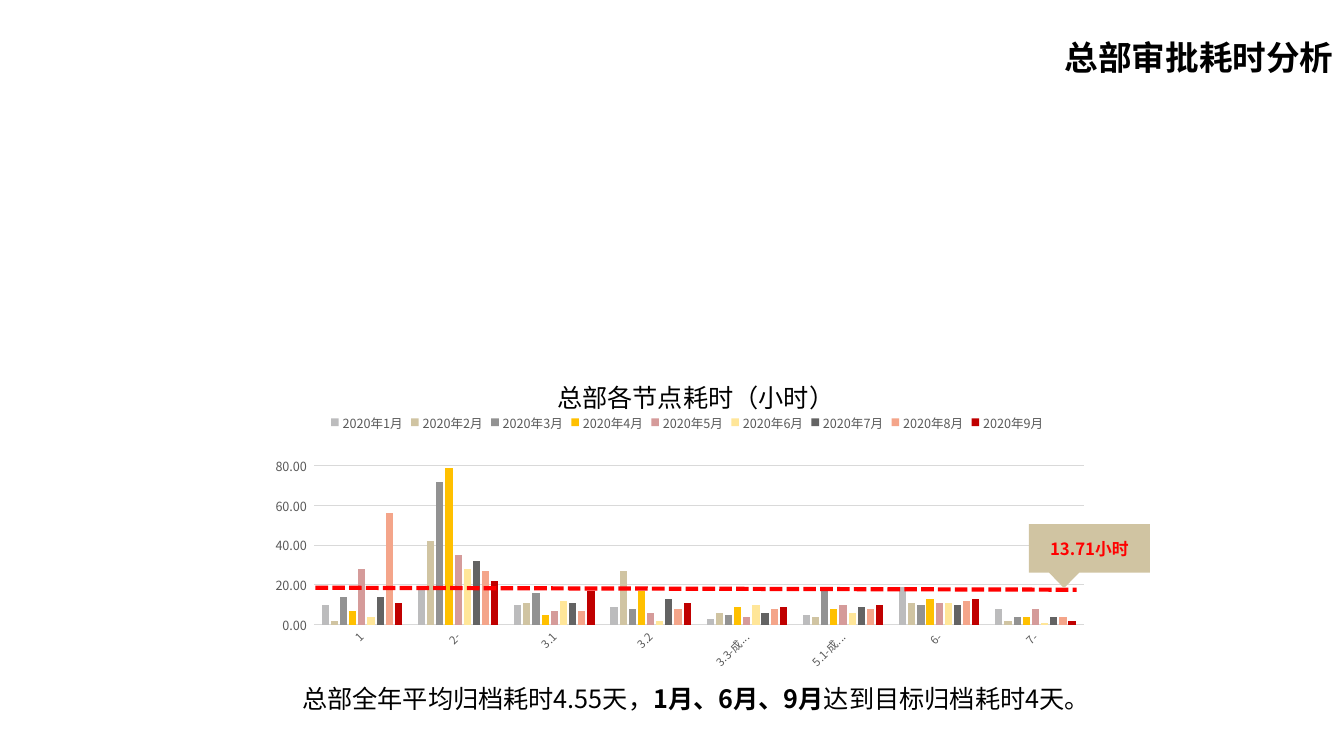
from lxml import etree
from pptx import Presentation
from pptx.chart.data import CategoryChartData
from pptx.dml.color import RGBColor
from pptx.enum.chart import XL_CHART_TYPE, XL_LEGEND_POSITION, XL_TICK_MARK
from pptx.enum.dml import MSO_LINE
from pptx.enum.shapes import MSO_CONNECTOR, MSO_SHAPE
from pptx.enum.text import MSO_ANCHOR, PP_ALIGN
from pptx.oxml import parse_xml
from pptx.oxml.ns import nsdecls, qn
from pptx.util import Cm, Pt

CLUSTERED = XL_CHART_TYPE.COLUMN_CLUSTERED
LEGEND_TOP = XL_LEGEND_POSITION.TOP
NO_TICK = XL_TICK_MARK.NONE
DASH = MSO_LINE.SQUARE_DOT
STRAIGHT = MSO_CONNECTOR.STRAIGHT
CALLOUT = MSO_SHAPE.RECTANGULAR_CALLOUT
MIDDLE = MSO_ANCHOR.MIDDLE
CENTER, RIGHT = PP_ALIGN.CENTER, PP_ALIGN.RIGHT

FONT = "Noto Sans CJK SC"
COLORS = {"text": "000000", "axis": "595959", "grid": "D9D9D9",
          "target": "FF0000", "callout": "D0C4A2", "paper": "FFFFFF"}
NODES = ["1-申请人", "2-本地财务", "3.1-项目负责人", "3.2-项目管理专员",
         "3.3-成本中心负责人/部门经理审批", "5.1-成本中心分管/主管高管审批",
         "6-报销中心稽核", "7-报销中心付款"]
MONTHS = [
    ("BCBCBD", [10, 18, 10, 9, 3, 5, 19, 8]),
    ("D0C4A2", [2, 42, 11, 27, 6, 4, 11, 2]),
    ("929292", [14, 72, 16, 8, 5, 17, 10, 4]),
    ("FFC000", [7, 79, 5, 17, 9, 8, 13, 4]),
    ("D59B9A", [28, 35, 7, 6, 4, 10, 11, 8]),
    ("FFE699", [4, 28, 12, 2, 10, 6, 11, 1]),
    ("636363", [14, 32, 11, 13, 6, 9, 10, 4]),
    ("F4A58A", [56, 27, 7, 8, 8, 8, 12, 4]),
    ("C00000", [11, 22, 17, 11, 9, 10, 13, 2]),
]


def color(name):
    return RGBColor.from_string(COLORS[name])


def set_font(font, size, name="text", bold=None):
    font.name = FONT
    font.size = Pt(size)
    font.color.rgb = color(name)
    font.bold = bold


def write(frame, parts, size, align=CENTER, name="text", bold=None):
    frame.word_wrap = True
    paragraph = frame.paragraphs[0]
    paragraph.alignment = align
    for text, strong in parts:
        run = paragraph.add_run()
        run.text = text
        if strong:
            run.font.bold = True
    set_font(paragraph.font, size, name, bold)
    defaults = paragraph._p.pPr.find(qn("a:defRPr"))
    etree.SubElement(defaults, qn("a:ea")).set("typeface", FONT)
    return paragraph


def add_title(slide, text):
    title = slide.shapes.title
    title.left, title.top, title.width, title.height = Cm(21.95), Cm(0.91), Cm(11.91), Cm(1.19)
    title.text_frame.vertical_anchor = MIDDLE
    write(title.text_frame, [(text, False)], 24, RIGHT, bold=True).line_spacing = 0.9


def add_text(slide, left, top, width, parts):
    box = slide.shapes.add_textbox(Cm(left), Cm(top), Cm(width), Cm(1.02))
    write(box.text_frame, parts, 18)


def style_axes(chart):
    nodes, hours = chart.category_axis, chart.value_axis
    for axis, size in ((nodes, 8), (hours, 9)):
        axis.major_tick_mark = axis.minor_tick_mark = NO_TICK
        set_font(axis.tick_labels.font, size, "axis")
    nodes.tick_labels.font._element.getparent().getparent().getparent().find(
        qn("a:bodyPr")).set("rot", "-2700000")
    hours.minimum_scale, hours.maximum_scale, hours.major_unit = 0, 80, 20
    hours.tick_labels.number_format = "0.00_ "
    hours.tick_labels.number_format_is_linked = False
    hours.format.line.fill.background()
    for line in (nodes.format.line, hours.major_gridlines.format.line):
        line.color.rgb = color("grid")
        line.width = Pt(0.75)


def set_plot_area(chart, x, y, w, h):
    area = chart._chartSpace.chart.plotArea
    for layout in area.findall(qn("c:layout")):
        area.remove(layout)
    sizes = "".join(f'<c:{tag} val="{value}"/>'
                    for tag, value in zip("xywh", (x, y, w, h)))
    area.insert(0, parse_xml(
        f'<c:layout {nsdecls("c")}><c:manualLayout><c:layoutTarget val="inner"/>'
        f'<c:xMode val="edge"/><c:yMode val="edge"/>{sizes}'
        '</c:manualLayout></c:layout>'))


def fill_chart(chart):
    chart._chartSpace.chart.addnext(parse_xml(
        f'<c:spPr {nsdecls("c", "a")}><a:solidFill><a:srgbClr val="{COLORS["paper"]}"/>'
        '</a:solidFill><a:ln><a:noFill/></a:ln></c:spPr>'))


def add_node_chart(slide):
    data = CategoryChartData(number_format="0.00")
    data.categories = NODES
    for month, (_, hours) in enumerate(MONTHS, 1):
        data.add_series(f"2020年{month}月", hours)
    chart = slide.shapes.add_chart(CLUSTERED, Cm(6.22), Cm(10.13),
                                   Cm(22.2), Cm(6.76), data).chart
    set_font(chart.font, 10)
    chart.has_title = False
    chart.has_legend = True
    chart.legend.position = LEGEND_TOP
    chart.legend.include_in_layout = False
    set_font(chart.legend.font, 9, "axis")
    plot = chart.plots[0]
    plot.gap_width, plot.overlap = 219, -27
    plot.vary_by_categories = False
    for series, (shade, _) in zip(plot.series, MONTHS):
        series.format.fill.solid()
        series.format.fill.fore_color.rgb = RGBColor.from_string(shade)
    style_axes(chart)
    set_plot_area(chart, 0.076, 0.238, 0.874, 0.592)
    fill_chart(chart)


def add_target_line(slide):
    target = slide.shapes.add_connector(STRAIGHT, Cm(7.95), Cm(14.81), Cm(27.13), Cm(14.86))
    target.line.color.rgb = color("target")
    target.line.width = Pt(3)
    target.line.dash_style = DASH
    etree.SubElement(target._element.spPr, qn("a:effectLst"))


def add_callout(slide, text):
    callout = slide.shapes.add_shape(CALLOUT, Cm(25.93), Cm(13.21), Cm(3.05), Cm(1.22))
    callout.adjustments[0], callout.adjustments[1] = -0.21, 0.82
    callout.shadow.inherit = False
    callout.fill.solid()
    callout.fill.fore_color.rgb = color("callout")
    callout.line.fill.background()
    callout.text_frame.vertical_anchor = MIDDLE
    write(callout.text_frame, [(text, False)], 12, name="target", bold=True)


def main():
    deck = Presentation()
    deck.slide_width, deck.slide_height = Cm(33.87), Cm(19.05)
    slide = deck.slides.add_slide(deck.slide_layouts[5])
    add_title(slide, "总部审批耗时分析")
    add_node_chart(slide)
    add_text(slide, 12.24, 9.5, 10.59, [("总部各节点耗时（小时）", False)])
    add_target_line(slide)
    add_callout(slide, "13.71小时")
    add_text(slide, 2.95, 17.09, 29.18, [("总部全年平均归档耗时4.55天，", False),
                                         ("1月、6月、9月", True),
                                         ("达到目标归档耗时4天。", False)])
    deck.save("out.pptx")


if __name__ == "__main__":
    main()
